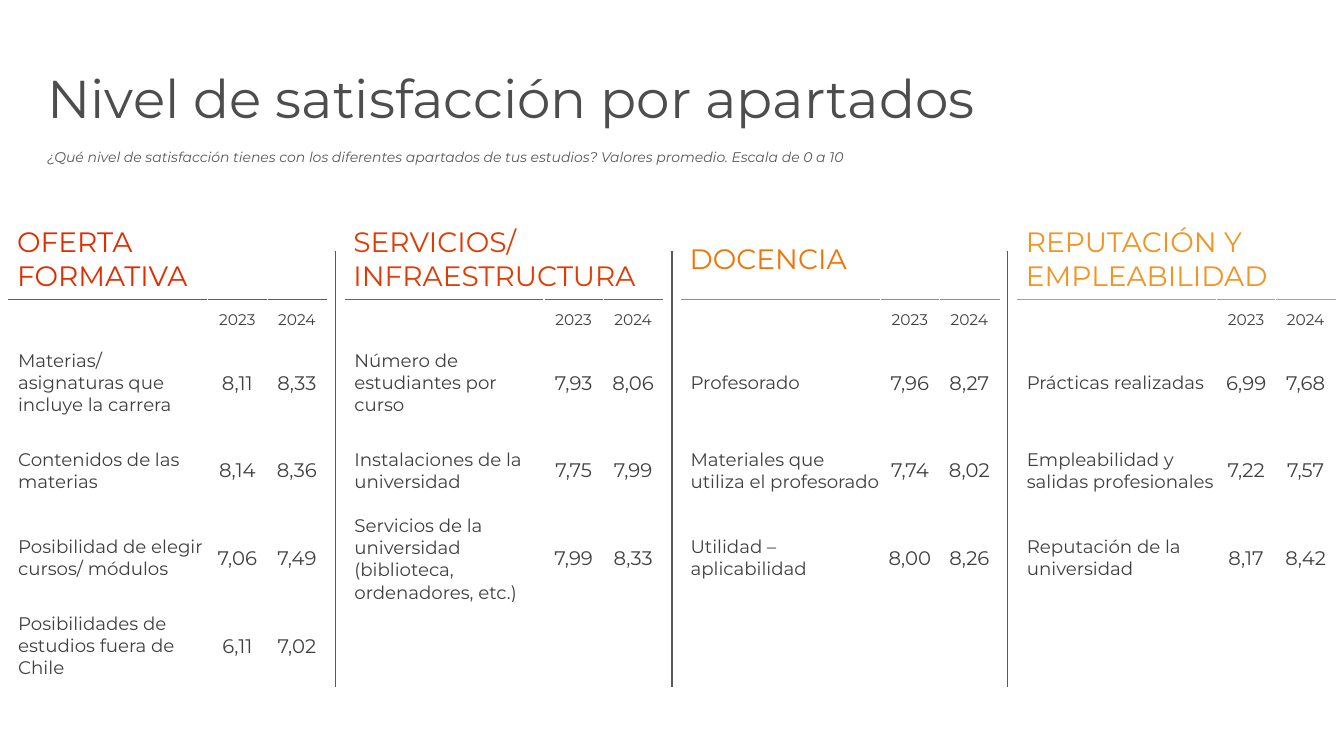
from lxml.etree import SubElement
from pptx import Presentation
from pptx.dml.color import RGBColor
from pptx.enum.shapes import MSO_CONNECTOR
from pptx.enum.text import MSO_ANCHOR, PP_ALIGN
from pptx.oxml import parse_xml
from pptx.oxml.ns import nsdecls, qn
from pptx.util import Inches, Pt

LEFT, TOP, PITCH = 0.09, 2.18, 3.335
WIDTHS = [1.97, 0.59, 0.59]
HEIGHTS = [0.79, 0.39] + [0.87] * 4
MARGINS = ("margin_left", "margin_top", "margin_right", "margin_bottom")
GROUPS = [
    ("OFERTA\vFORMATIVA", "E02D00", [
        ("Materias/ asignaturas que incluye la carrera", "8,11", "8,33"),
        ("Contenidos de las materias", "8,14", "8,36"),
        ("Posibilidad de elegir cursos/ módulos", "7,06", "7,49"),
        ("Posibilidades de estudios fuera de Chile", "6,11", "7,02")]),
    ("SERVICIOS/ INFRAESTRUCTURA", "E03A05", [
        ("Número de estudiantes por curso", "7,93", "8,06"),
        ("Instalaciones de la universidad", "7,75", "7,99"),
        ("Servicios de la universidad (biblioteca, ordenadores, etc.)", "7,99", "8,33")]),
    ("DOCENCIA", "F37201", [
        ("Profesorado", "7,96", "8,27"),
        ("Materiales que utiliza el profesorado", "7,74", "8,02"),
        ("Utilidad – aplicabilidad", "8,00", "8,26")]),
    ("REPUTACIÓN Y EMPLEABILIDAD", "F39322", [
        ("Prácticas realizadas", "6,99", "7,68"),
        ("Empleabilidad y salidas profesionales", "7,22", "7,57"),
        ("Reputación de la universidad", "8,17", "8,42")]),
]


def write(frame, text, size, color, align=PP_ALIGN.LEFT, italic=False):
    frame.text = text
    frame.word_wrap = True
    par = frame.paragraphs[0]
    par.alignment = align
    look = {"name": "Montserrat", "size": Pt(size), "bold": False, "italic": italic}
    for run in par.runs:
        for key, value in look.items():
            setattr(run.font, key, value)
        run.font.color.rgb = RGBColor.from_string(color)


def rule(cell, side, color):
    """Draw a 1 pt border on one side of a cell: lnT or lnB."""
    cell._tc.get_or_add_tcPr().insert(0, parse_xml(
        f'<a:{side} {nsdecls("a")} w="12700"><a:solidFill>'
        f'<a:srgbClr val="{color}"/></a:solidFill></a:{side}>'))


deck = Presentation()
deck.slide_width, deck.slide_height = Inches(13.33), Inches(7.5)
slide = deck.slides.add_slide(deck.slide_layouts[5])

title = slide.shapes.title
title.left, title.top = Inches(0.37), Inches(0.6)
title.width, title.height = Inches(9.52), Inches(1.09)
write(title.text_frame, "Nivel de satisfacción por apartados", 38, "4D4D4D")
title.text_frame.vertical_anchor = MSO_ANCHOR.TOP

note = slide.shapes.add_textbox(Inches(0.37), Inches(1.42), Inches(10.5), Inches(0.27))
write(note.text_frame, "¿Qué nivel de satisfacción tienes con los diferentes apartados de "
      "tus estudios? Valores promedio. Escala de 0 a 10", 10, "595959", italic=True)

for i, (head, color, items) in enumerate(GROUPS):
    table = slide.shapes.add_table(
        len(HEIGHTS), len(WIDTHS), Inches(LEFT + i * PITCH), Inches(TOP),
        Inches(sum(WIDTHS)), Inches(sum(HEIGHTS))).table
    table.first_row = table.horz_banding = False
    for col, width in zip(table.columns, WIDTHS):
        col.width = Inches(width)
    for row, height in zip(table.rows, HEIGHTS):
        row.height = Inches(height)
    table.cell(0, 0).merge(table.cell(0, 2))

    rows = [(head, "", ""), ("", "2023", "2024"), *items]
    rows += [("", "", "")] * (len(HEIGHTS) - len(rows))
    for r, texts in enumerate(rows):
        for c, text in enumerate(texts):
            cell = table.cell(r, c)
            cell.fill.background()
            cell.vertical_anchor = MSO_ANCHOR.MIDDLE
            if r == 0:
                insets, size, ink = (0.08, 0.05, 0.08, 0.05), 20, color
                rule(cell, "lnB", color)
            else:
                insets = (0.01 if c else 0.09, 0.01, 0.01, 0)
                size, ink = 11 if r == 1 else 14 if c else 13, "404040"
            if r == 1:
                rule(cell, "lnT", color)
            for name, inset in zip(MARGINS, insets):
                setattr(cell, name, Inches(inset))
            if text:
                write(cell.text_frame, text, size, ink,
                      PP_ALIGN.CENTER if c else PP_ALIGN.LEFT)

for i in range(1, len(GROUPS)):
    x = Inches(i * 13.33 / len(GROUPS))
    line = slide.shapes.add_connector(MSO_CONNECTOR.STRAIGHT, x, Inches(2.49), x, Inches(6.82))
    line.line.color.rgb = RGBColor.from_string("595959")
    line.line.width = Pt(0.75)
    SubElement(line._element.spPr, qn("a:effectLst"))

deck.save("out.pptx")
